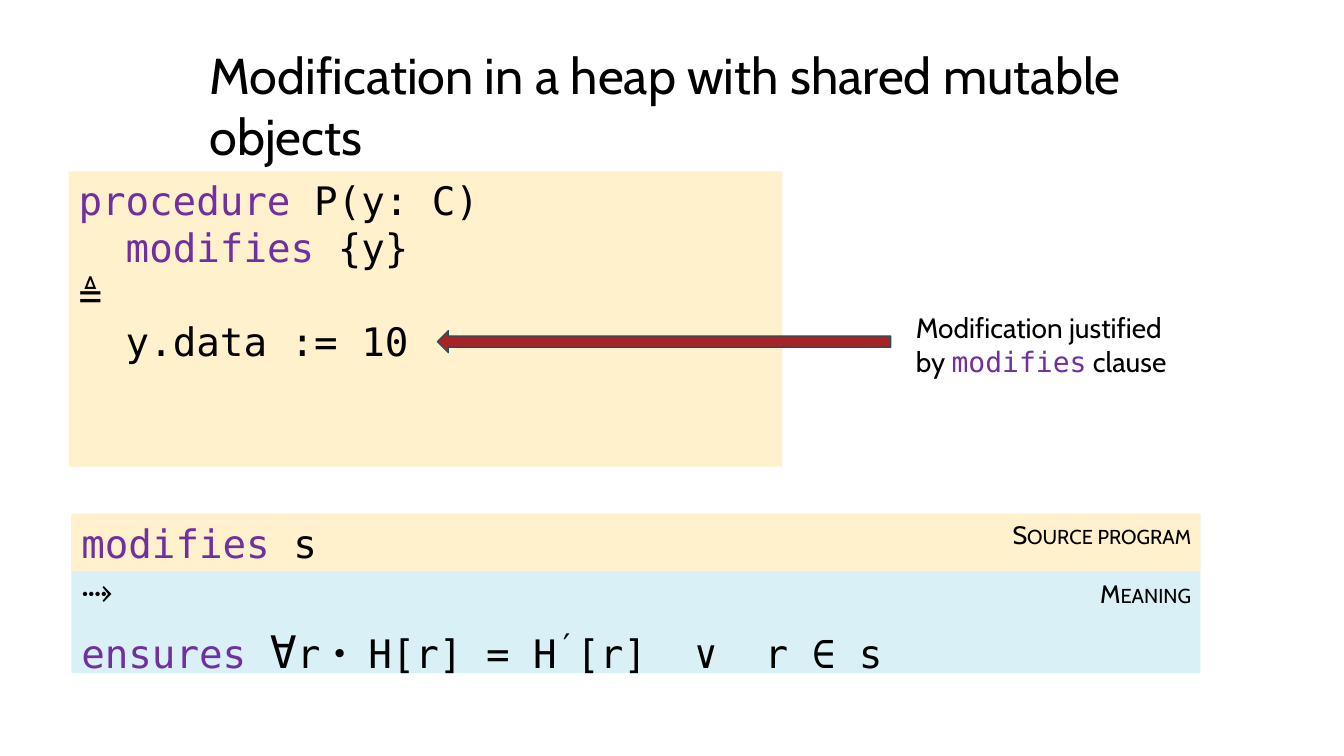
from dataclasses import dataclass

from pptx import Presentation
from pptx.dml.color import RGBColor
from pptx.enum.shapes import MSO_SHAPE
from pptx.enum.text import MSO_ANCHOR, PP_ALIGN
from pptx.util import Cm, Pt

RECTANGLE = MSO_SHAPE.RECTANGLE
LEFT_ARROW = MSO_SHAPE.LEFT_ARROW
TOP = MSO_ANCHOR.TOP
LEFT = PP_ALIGN.LEFT
RIGHT = PP_ALIGN.RIGHT


@dataclass(frozen=True)
class Theme:
    prose: str = "Cabin"
    code: str = "DejaVu Sans Mono"
    ink: str = "000000"
    keyword: str = "7030A0"
    source: str = "FFF1CB"
    meaning: str = "D9F1F6"
    arrow: str = "A72327"
    arrow_edge: str = "1C525C"
    title_size: int = 36
    code_size: int = 28
    quantifier_size: int = 32
    prime_size: int = 40
    note_size: int = 20
    caption_size: int = 18


@dataclass(frozen=True)
class Span:
    text: str
    color: str = ""
    font: str = ""
    size: int = 0
    baseline: int = 0
    small_caps: bool = False


class SlideBuilder:
    def __init__(self, page, theme):
        self.page = page
        self.theme = theme

    def fill_text(self, frame, lines, font, size, align=LEFT):
        frame.word_wrap = True
        frame.vertical_anchor = TOP
        for index, (indent, spans) in enumerate(lines):
            para = frame.paragraphs[0] if index == 0 else frame.add_paragraph()
            para.alignment = align
            para.font.name = font
            para.font.size = Pt(size)
            para.font.color.rgb = RGBColor.from_string(self.theme.ink)
            if indent:
                para._p.get_or_add_pPr().set("marL", str(Cm(indent)))
            for span in spans:
                self.add_span(para, span)

    def add_span(self, para, span):
        run = para.add_run()
        run.text = span.text
        if span.color:
            run.font.color.rgb = RGBColor.from_string(span.color)
        if span.font:
            run.font.name = span.font
        if span.size:
            run.font.size = Pt(span.size)
        properties = run._r.get_or_add_rPr()
        if span.baseline:
            properties.set("baseline", str(span.baseline * 1000))
        if span.small_caps:
            properties.set("cap", "small")

    def text(self, area, spans, size, align=LEFT):
        box = self.page.shapes.add_textbox(*map(Cm, area))
        self.fill_text(box.text_frame, [(0, spans)], self.theme.prose, size, align)

    def caption(self, top, text):
        span = Span(text, small_caps=True)
        self.text((23.11, top, 7.16, 1.02), [span], self.theme.caption_size, RIGHT)

    def shape(self, kind, area, fill):
        shape = self.page.shapes.add_shape(kind, *map(Cm, area))
        shape.shadow.inherit = False
        shape.fill.solid()
        shape.fill.fore_color.rgb = RGBColor.from_string(fill)
        shape.line.fill.background()
        return shape

    def code_panel(self, area, fill, lines, top_inset=0.13):
        panel = self.shape(RECTANGLE, area, fill)
        panel.text_frame.margin_top = Cm(top_inset)
        self.fill_text(panel.text_frame, lines, self.theme.code, self.theme.code_size)

    def arrow(self, area):
        arrow = self.shape(LEFT_ARROW, area, self.theme.arrow)
        arrow.line.color.rgb = RGBColor.from_string(self.theme.arrow_edge)
        arrow.line.width = Pt(0.85)


def main():
    deck = Presentation()
    deck.slide_width = Cm(33.87)
    deck.slide_height = Cm(19.05)
    theme = Theme()
    builder = SlideBuilder(deck.slides.add_slide(deck.slide_layouts[6]), theme)
    modifies = Span("modifies", theme.keyword, theme.code)
    code_indent = 1.19

    builder.text(
        (5.03, 0.99, 27.41, 1.8),
        [Span("Modification in a heap with shared mutable objects")],
        theme.title_size,
    )
    builder.code_panel((1.73, 4.32, 17.98, 7.44), theme.source, [
        (0, [Span("procedure", theme.keyword), Span(" P(y: C)")]),
        (code_indent, [modifies, Span(" {y}")]),
        (0, [Span("≜")]),
        (code_indent, [Span("y.data := 10")]),
    ])
    builder.arrow((11.02, 8.33, 11.43, 0.56))
    builder.text(
        (22.83, 7.7, 7.14, 1.96),
        [Span("Modification justified by "), modifies, Span(" clause")],
        theme.note_size,
    )
    builder.code_panel((1.8, 12.95, 28.45, 4.01), theme.meaning, [
        (0, [Span("⤑")]),
        (0, [
            Span("ensures ", theme.keyword),
            Span("∀", size=theme.quantifier_size),
            Span("r・ H[r] = H"),
            Span("′", size=theme.prime_size, baseline=20),
            Span("[r]  ∨  r ∈ s"),
        ]),
    ], top_inset=1.3)
    builder.code_panel((1.8, 12.95, 28.45, 1.45), theme.source, [
        (0, [modifies, Span(" s")]),
    ])
    builder.caption(12.95, "Source program")
    builder.caption(14.45, "Meaning")
    deck.save("out.pptx")


if __name__ == "__main__":
    main()
